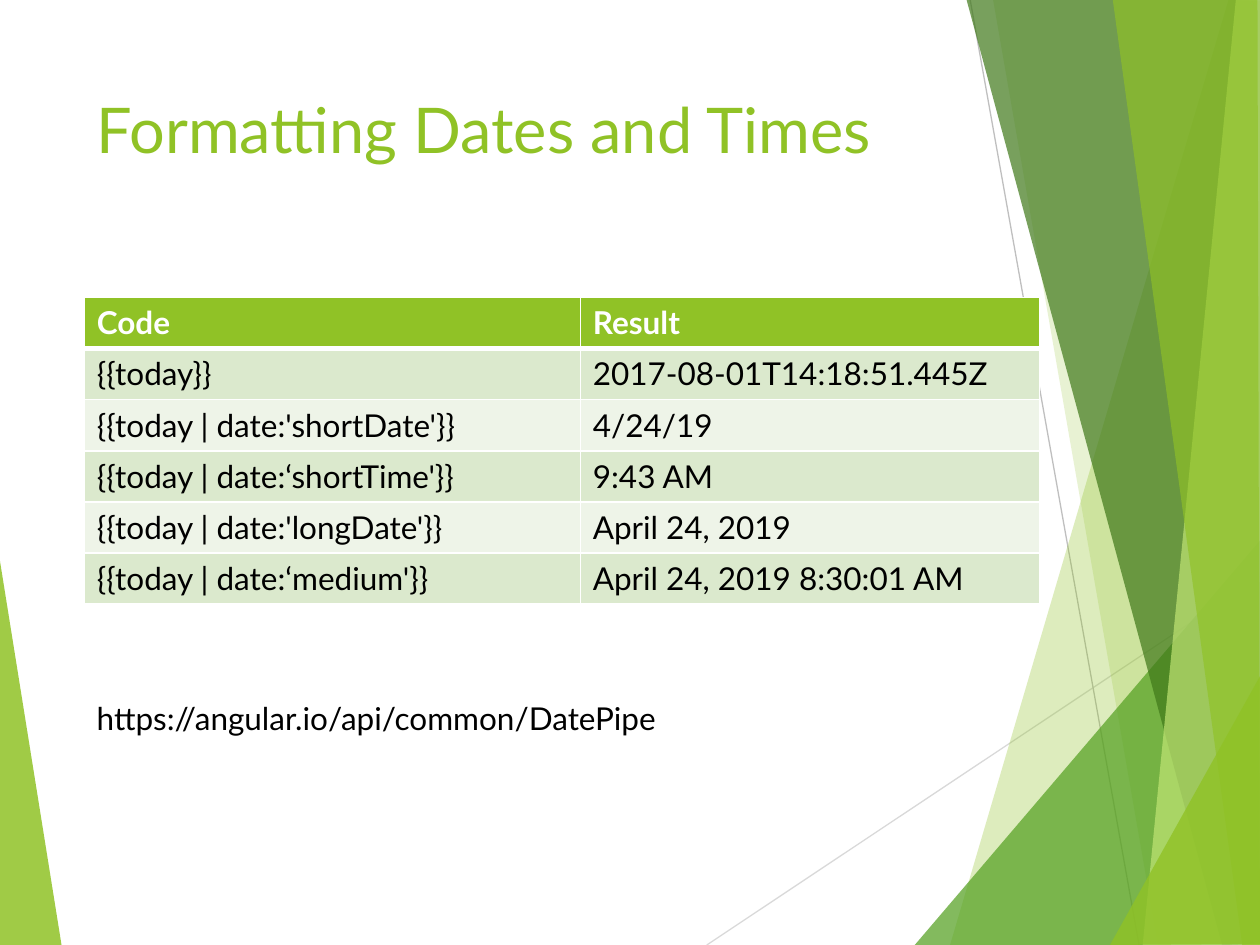
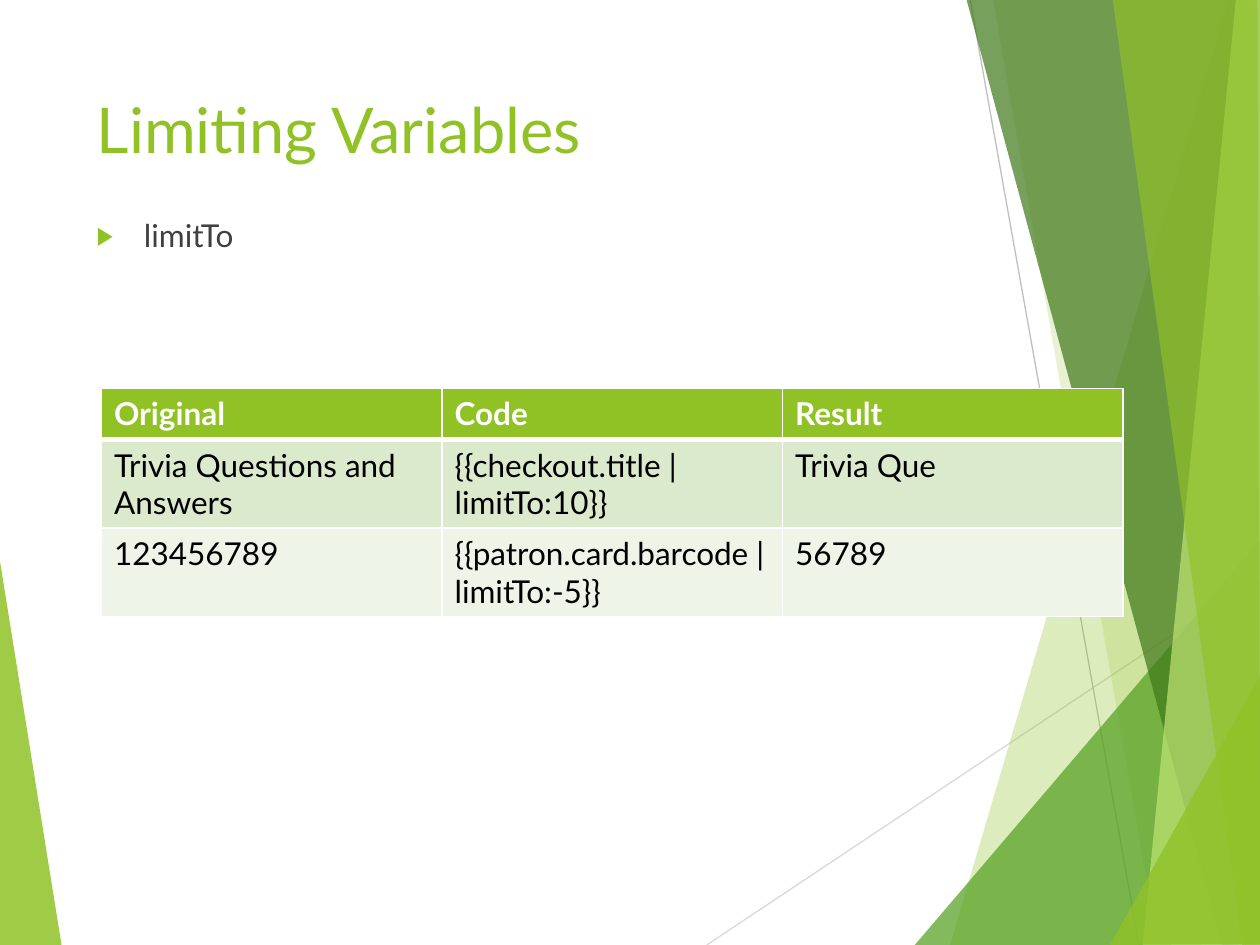
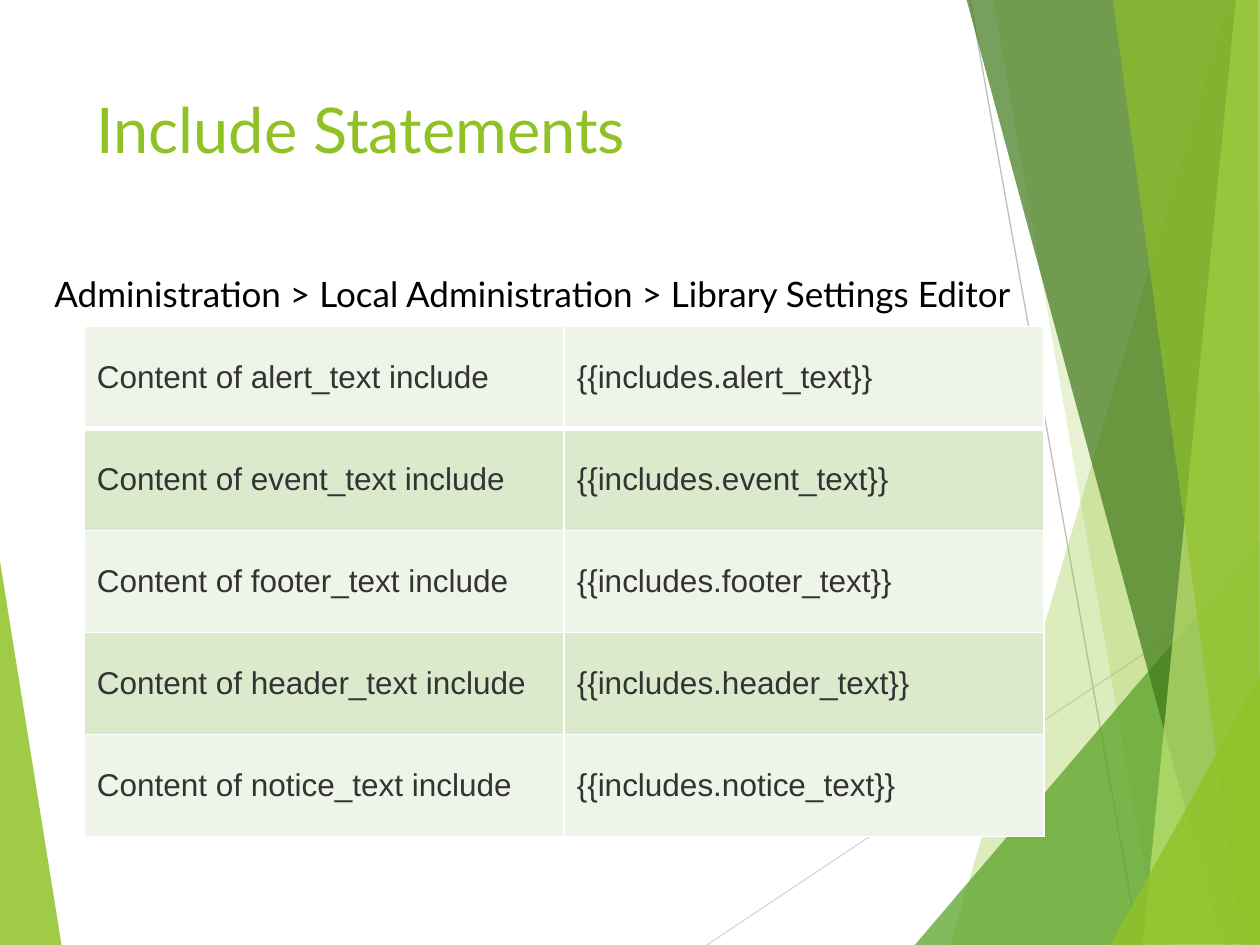
import pptx
import pptx.dml.color
import pptx.enum.shapes
import pptx.enum.text
import pptx.oxml.ns
import pptx.util
from lxml import etree

Pt = pptx.util.Pt
qn = pptx.oxml.ns.qn
Anchor = pptx.enum.text.MSO_ANCHOR
Fit = pptx.enum.text.MSO_AUTO_SIZE

HUES = {
    "lime": "90C226", "green": "54A021", "dark": "3F7819", "light": "C0E474",
    "mint": "DBE9CD", "pale": "EEF4E8", "white": "FFFFFF", "black": "000000",
    "body": "404040", "cell": "333333", "rule": "D9D9D9", "edge": "BFBFBF",
}
FONTS = {
    "title": ({"name": "Lato", "size": Pt(36), "bold": False}, "lime"),
    "head": ({"name": "Lato", "size": Pt(18), "bold": True}, "white"),
    "plain": ({"name": "Lato", "size": Pt(18), "bold": False}, "black"),
    "point": ({"name": "Lato", "size": Pt(18), "bold": False}, "body"),
    "trail": ({"name": "Lato", "size": Pt(20), "bold": False}, "black"),
    "code": ({"name": "Arial", "size": Pt(18), "bold": False}, "cell"),
}
WIDE, HIGH = 720, 540
LEFT = 48.2
ROW = 29.2

# Hue, opacity in percent, corners
LEAF = ("lime", 85, [(-0.7, 316.1), (35.3, 540.7), (-0.7, HIGH)])
RULES = [("rule", (403.9, HIGH), (720.7, 329)), ("edge", (554.4, 0), (650.9, HIGH))]
BANDS = [
    ("lime", 30, [(702, 0), (542.9, HIGH), (721.4, 540.7), (720.7, 0.7)]),
    ("lime", 20, [(567.4, -0.7), (661.7, HIGH), (720.7, HIGH), (720.7, -0.7)]),
    ("green", 72, [(522.7, HIGH), (WIDE, 308.9), (720.7, HIGH)]),
    ("dark", 70, [(552.2, -0.7), (698.4, HIGH), (720.7, 539.3), (720.7, -0.7)]),
    ("light", 70, [(706.3, -0.7), (653, HIGH), (720.7, HIGH), (WIDE, -0.7)]),
    ("lime", 65, [(635.8, -0.7), (709.9, HIGH), (WIDE, HIGH), (718.6, -0.7)]),
    ("lime", 80, [(634.3, HIGH), (720.7, 385.2), (720.7, 539.3)]),
]


def hue(name):
    return pptx.dml.color.RGBColor.from_string(HUES[name])


def add(parent, tag, **values):
    return etree.SubElement(parent, qn(tag), values)


class Deck:
    def __init__(self):
        self.file = pptx.Presentation()
        self.file.slide_width, self.file.slide_height = Pt(WIDE), Pt(HIGH)

    def start(self, title, high=59.8):
        self.slide = self.file.slides.add_slide(self.file.slide_layouts[6])
        self.shapes = self.slide.shapes
        self.band(*LEAF)
        for rule in RULES:
            self.line(*rule)
        for band in BANDS:
            self.band(*band)
        self.text(title, (LEFT, 48.2, 499.7, high), "title")

    def band(self, name, alpha, dots):
        dots = [(Pt(x), Pt(y)) for x, y in dots]
        pen = self.shapes.build_freeform(*dots[0])
        pen.add_line_segments(dots[1:])
        shape = pen.convert_to_shape()
        shape.shadow.inherit = False
        shape.line.fill.background()
        shape.fill.solid()
        shape.fill.fore_color.rgb = hue(name)
        tint = next(shape.element.spPr.iter(qn("a:srgbClr")))
        add(tint, "a:alpha", val=str(alpha * 1000))

    def line(self, name, start, end):
        kind = pptx.enum.shapes.MSO_CONNECTOR.STRAIGHT
        line = self.shapes.add_connector(kind, *map(Pt, start + end))
        line.line.color.rgb = hue(name)
        line.line.width = Pt(0.75)
        add(line.element.spPr, "a:effectLst")

    def label(self, frame, words, style):
        run = frame.paragraphs[0].add_run()
        run.text = words
        values, name = FONTS[style]
        for key, value in values.items():
            setattr(run.font, key, value)
        run.font.color.rgb = hue(name)

    def text(self, words, place, style, wrap=True, fit=Fit.NONE):
        frame = self.shapes.add_textbox(*map(Pt, place)).text_frame
        form = {"word_wrap": wrap, "auto_size": fit, "vertical_anchor": Anchor.TOP}
        for key, value in form.items():
            setattr(frame, key, value)
        self.label(frame, words, style)
        return frame.paragraphs[0]

    def point(self, words, place):
        """Add a text box with one bulleted line."""
        para = self.text(words, place, "point")
        para.space_before = Pt(10)
        props = para._p.get_or_add_pPr()
        props.set("marL", str(Pt(27)))
        props.set("indent", str(-Pt(27)))
        add(add(props, "a:buClr"), "a:srgbClr", val=HUES["lime"])
        add(props, "a:buSzPct", val="80000")
        add(props, "a:buFont", typeface="Arial")
        add(props, "a:buChar", char="▶")

    def edges(self, cell, row):
        """Draw white borders, thick below the first row."""
        props = cell._tc.get_or_add_tcPr()
        sizes = {"L": 1, "R": 1, "T": 3 if row == 1 else 1, "B": 1 if row else 3}
        for side, size in sizes.items():
            edge = add(props, f"a:ln{side}", w=str(Pt(size)))
            add(add(edge, "a:solidFill"), "a:srgbClr", val=HUES["white"])

    def table(self, rows, spot, cols, highs, style="plain", head=True, anchor=Anchor.TOP):
        size = (sum(cols), sum(highs))
        grid = self.shapes.add_table(len(rows), len(cols), *map(Pt, spot + size)).table
        grid.first_row = head
        for col, wide in zip(grid.columns, cols):
            col.width = Pt(wide)
        for i, words in enumerate(rows):
            grid.rows[i].height = Pt(highs[i])
            top = head and i == 0
            for j, word in enumerate(words):
                cell = grid.cell(i, j)
                cell.vertical_anchor = anchor
                self.edges(cell, i)
                cell.fill.solid()
                cell.fill.fore_color.rgb = hue("lime" if top else ("pale", "mint")[i % 2])
                self.label(cell.text_frame, word, "head" if top else style)


def main():
    deck = Deck()

    deck.start("Formatting Dates and Times")
    dates = [
        ("Code", "Result"),
        ("{{today}}", "2017-08-01T14:18:51.445Z"),
        ("{{today | date:'shortDate'}}", "4/24/19"),
        ("{{today | date:‘shortTime'}}", "9:43 AM"),
        ("{{today | date:'longDate'}}", "April 24, 2019"),
        ("{{today | date:‘medium'}}", "April 24, 2019 8:30:01 AM"),
    ]
    deck.table(dates, (LEFT, 170), [283.4, 262.6], [ROW] * len(dates))
    deck.text("https://angular.io/api/common/DatePipe", (LEFT, 396, 356.4, 29),
              "plain", wrap=False, fit=Fit.SHAPE_TO_FIT_TEXT)

    deck.start("Limiting Variables")
    deck.point("limitTo", (LEFT, 120.2, 499.7, 355.7))
    limits = [
        ("Original", "Code", "Result"),
        ("Trivia Questions and Answers", "{{checkout.title | limitTo:10}}", "Trivia Que"),
        ("123456789", "{{patron.card.barcode | limitTo:-5}}", "56789"),
    ]
    deck.table(limits, (58, 222), [194.6] * 3, [ROW, 50.5, 50.5])

    deck.start("Include Statements", 103.7)
    parts = ["alert", "event", "footer", "header", "notice"]
    notes = [(f"Content of {part}_text include", f"{{{{includes.{part}_text}}}}")
             for part in parts]
    deck.table(notes, (LEFT, 186.5), [274.2] * 2, [58.3] * len(notes),
               style="code", head=False, anchor=Anchor.MIDDLE)
    deck.text("Administration > Local Administration > Library Settings Editor",
              (24, 152, 625, 31.5), "trail", fit=Fit.SHAPE_TO_FIT_TEXT)

    deck.file.save("out.pptx")


if __name__ == "__main__":
    main()
